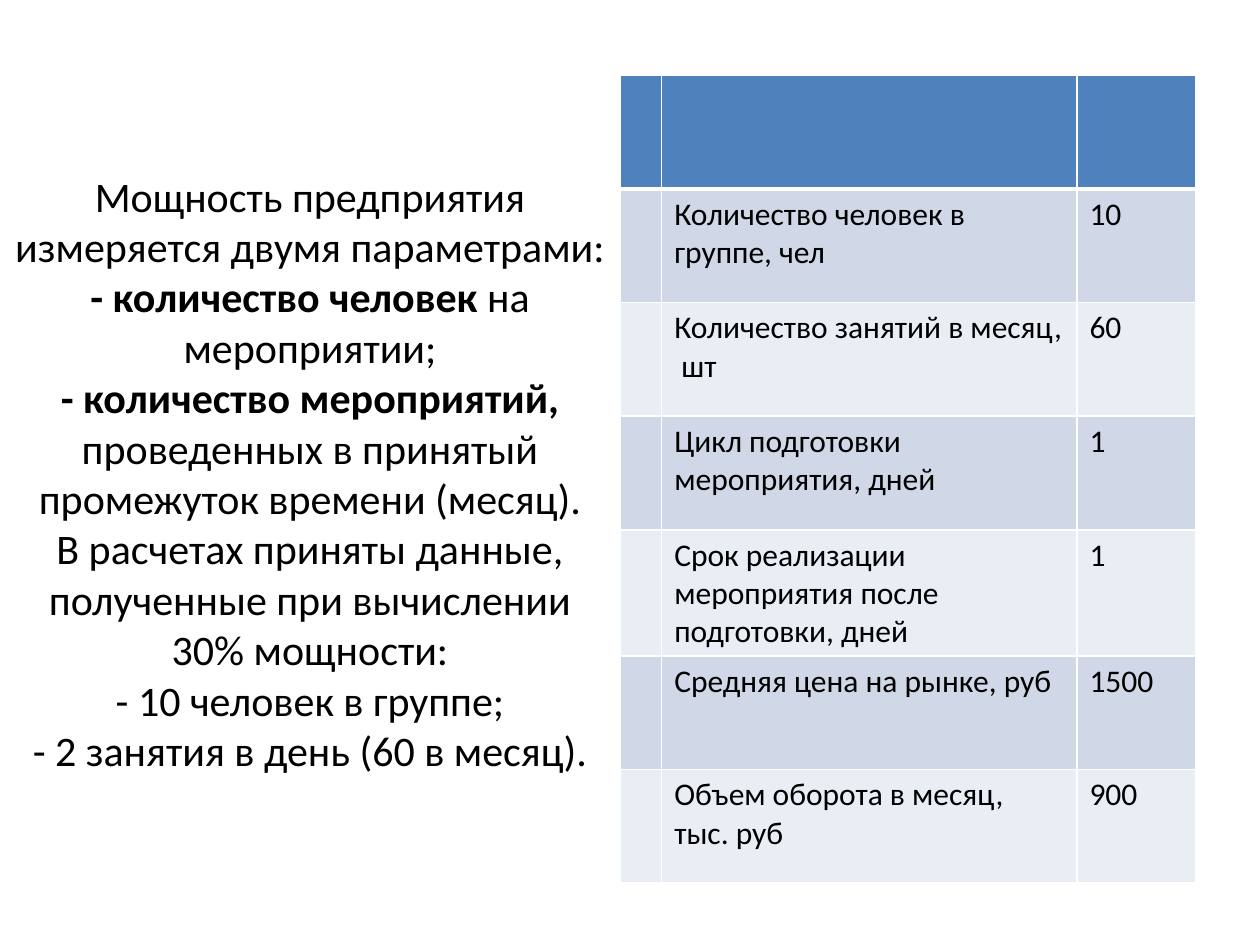
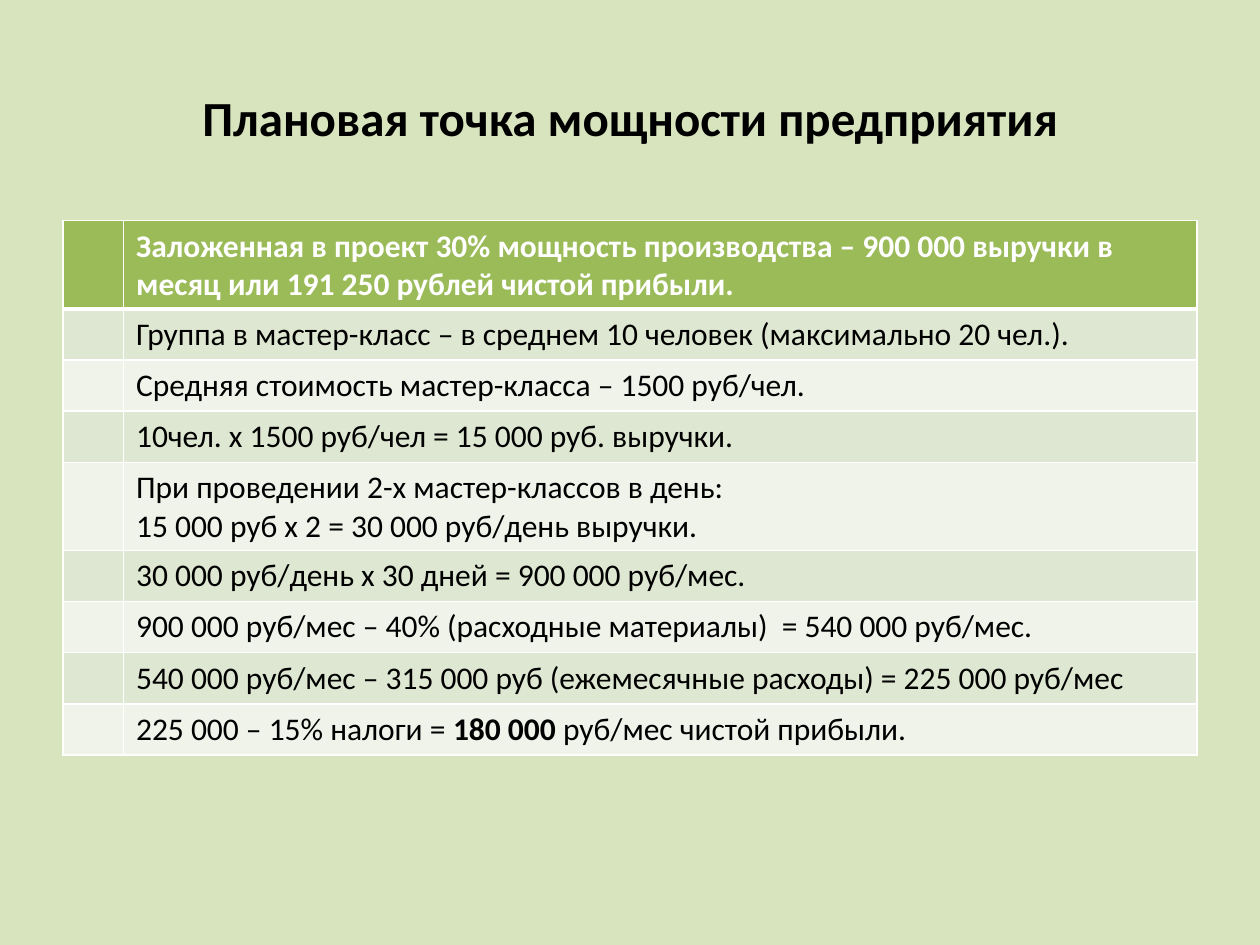
from lxml import etree
from pptx import Presentation
from pptx import util as u
from pptx.dml.color import RGBColor
from pptx.enum import text
from pptx.oxml import ns

FONT = "Calibri"
COLORS = {
    "white": "FFFFFF",
    "black": "000000",
    "green_page": "D7E4BD",
    "blue": ("4F81BD", "D0D8E8", "E9EDF4"),  # header, odd rows, even rows
    "green": ("9BBB59", "DEE7D1", "EFF3EA"),
}

CAPACITY_TEXT = """Мощность предприятия измеряется двумя параметрами:
**- количество человек **на мероприятии;
**- количество мероприятий, **проведенных в принятый промежуток времени (месяц).
В расчетах приняты данные, полученные при вычислении 30% мощности:
- 10 человек в группе;
- 2 занятия в день (60 в месяц)."""

CAPACITY_ROWS = [
    ("", "", ""),
    ("", "Количество человек в группе, чел", "10"),
    ("", "Количество занятий в месяц,  шт", "60"),
    ("", "Цикл подготовки мероприятия, дней", "1"),
    ("", "Срок реализации мероприятия после подготовки, дней", "1"),
    ("", "Средняя цена на рынке, руб", "1500"),
    ("", "Объем оборота в месяц, тыс. руб", "900"),
]

PLAN_ROWS = [("", line) for line in (
    "**Заложенная в проект 30% мощность производства – 900 000 выручки в месяц "
    "или 191 250 рублей чистой прибыли.**",
    "Группа в мастер-класс – в среднем 10 человек (максимально 20 чел.).",
    "Средняя стоимость мастер-класса – 1500 руб/чел.",
    "10чел. х 1500 руб/чел = 15 000 руб. выручки.",
    "При проведении 2-х мастер-классов в день:\n"
    "15 000 руб х 2 = 30 000 руб/день выручки.",
    "30 000 руб/день х 30 дней = 900 000 руб/мес.",
    "900 000 руб/мес – 40% (расходные материалы)  = 540 000 руб/мес.",
    "540 000 руб/мес – 315 000 руб (ежемесячные расходы) = 225 000 руб/мес",
    "225 000 – 15% налоги = **180 000 **руб/мес чистой прибыли.",
)]


def write_line(paragraph, line):
    """Add one line; the parts between ** marks are bold."""
    for index, part in enumerate(line.split("**")):
        if part:
            run = paragraph.add_run()
            run.text = part
            run.font.bold = index % 2 == 1


def style_paragraph(paragraph, size, color):
    paragraph.font.name = FONT
    paragraph.font.size = u.Pt(size)
    paragraph.font.color.rgb = RGBColor.from_string(color)


def add_title(slide, box, title, size):
    shape = slide.shapes.add_textbox(*map(u.Cm, box))
    frame = shape.text_frame
    frame.word_wrap = True
    frame.vertical_anchor = text.MSO_ANCHOR.MIDDLE
    paragraph = frame.paragraphs[0]
    paragraph.alignment = text.PP_ALIGN.CENTER
    style_paragraph(paragraph, size, COLORS["black"])
    for index, line in enumerate(title.split("\n")):
        if index:
            paragraph.add_line_break()
        write_line(paragraph, line)


def set_borders(cell, top, bottom):
    """Draw white borders; left and right are 1 pt wide."""
    properties = cell._tc.get_or_add_tcPr()
    widths = {"lnL": 1, "lnR": 1, "lnT": top, "lnB": bottom}
    for index, (side, width) in enumerate(widths.items()):
        line = etree.Element(ns.qn(f"a:{side}"), w=str(u.Pt(width)))
        fill = etree.SubElement(line, ns.qn("a:solidFill"))
        etree.SubElement(fill, ns.qn("a:srgbClr"), val=COLORS["white"])
        properties.insert(index, line)


def add_banded_table(slide, left, top, widths, row_height, rows, palette):
    table = slide.shapes.add_table(
        len(rows), len(widths), u.Cm(left), u.Cm(top),
        u.Cm(sum(widths)), u.Cm(row_height * len(rows))).table
    for column, width in zip(table.columns, widths):
        column.width = u.Cm(width)
    header, odd, even = COLORS[palette]
    for row_index, row in enumerate(rows):
        is_header = row_index == 0
        band = header if is_header else (even, odd)[row_index % 2]
        for column_index, content in enumerate(row):
            cell = table.cell(row_index, column_index)
            cell.fill.solid()
            cell.fill.fore_color.rgb = RGBColor.from_string(band)
            set_borders(cell, top=3 if row_index == 1 else 1,
                        bottom=3 if is_header else 1)
            frame = cell.text_frame
            for index, line in enumerate(content.split("\n")):
                paragraph = frame.add_paragraph() if index else frame.paragraphs[0]
                style_paragraph(paragraph, 18, COLORS["white" if is_header else "black"])
                write_line(paragraph, line)


def add_slide(presentation, background):
    slide = presentation.slides.add_slide(presentation.slide_layouts[6])
    slide.background.fill.solid()
    slide.background.fill.fore_color.rgb = RGBColor.from_string(COLORS[background])
    return slide


def build_capacity_slide(presentation):
    slide = add_slide(presentation, "white")
    add_title(slide, (0, 0, 12.5, 19.05), CAPACITY_TEXT, 24)
    add_banded_table(slide, 12.5, 1.52, (0.84, 8.37, 2.39), 2.29, CAPACITY_ROWS, "blue")


def build_plan_slide(presentation):
    slide = add_slide(presentation, "green_page")
    add_title(slide, (1.27, 0.76, 22.86, 3.18),
              "**Плановая точка мощности предприятия**", 28)
    add_banded_table(slide, 1.27, 4.45, (1.22, 21.64), 1.03, PLAN_ROWS, "green")


def main():
    presentation = Presentation()
    presentation.slide_width, presentation.slide_height = u.Cm(25.4), u.Cm(19.05)
    build_capacity_slide(presentation)
    build_plan_slide(presentation)
    presentation.save("out.pptx")


if __name__ == "__main__":
    main()
